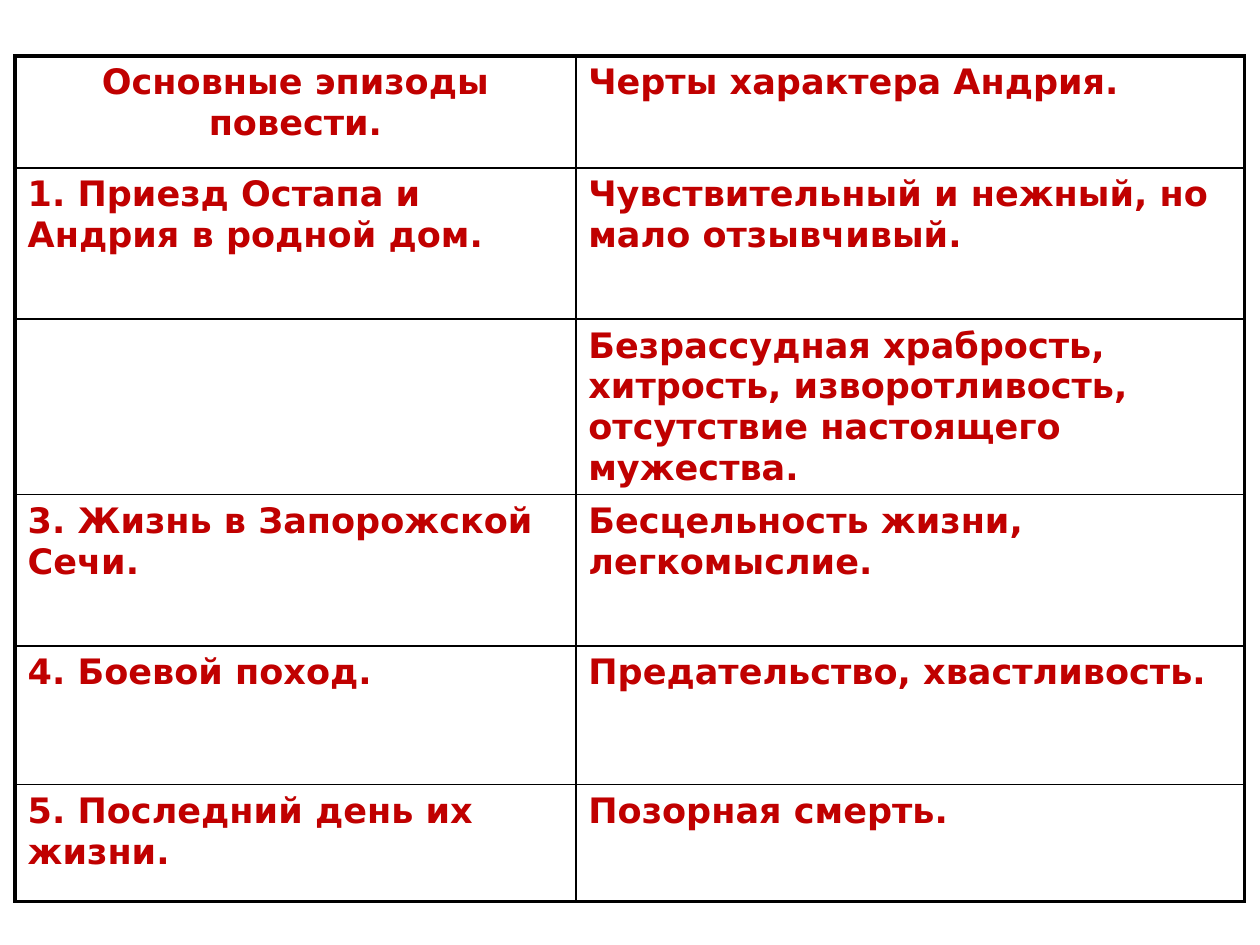
import pptx
import pptx.util
import pptx.dml.color
import pptx.enum.text
import pptx.oxml
from pptx.oxml.ns import nsdecls

Pt = pptx.util.Pt
RGB = pptx.dml.color.RGBColor.from_string
Align = pptx.enum.text.PP_ALIGN

# Content
ROWS = [
    ("Основные эпизоды повести.", "Черты характера Андрия."),
    ("1. Приезд Остапа и Андрия в родной дом.",
     "Чувствительный и нежный, но мало отзывчивый."),
    ("", "Безрассудная храбрость, хитрость, изворотливость, "
         "отсутствие настоящего мужества."),
    ("3. Жизнь в Запорожской Сечи.", "Бесцельность жизни, легкомыслие."),
    ("4. Боевой поход.", "Предательство, хвастливость."),
    ("5. Последний день их жизни.", "Позорная смерть."),
]

# Format
COLORS = {"text": "C00000", "line": "000000"}
FONT = {"name": "DejaVu Sans", "size": Pt(20), "bold": True}
LEFT, TOP = 8.64, 32
WIDTHS = [320.4, 382.3]
HEIGHTS = [64, 86.4, 100.3, 86.4, 79.2, 67]
THICK, THIN = 2.25, 1


def border(cell, side, width):
    cell._tc.get_or_add_tcPr().append(pptx.oxml.parse_xml(
        f'<a:ln{side} {nsdecls("a")} w="{Pt(width)}"><a:solidFill>'
        f'<a:srgbClr val="{COLORS["line"]}"/></a:solidFill></a:ln{side}>'))


def fill(cell, text, outer):
    # Thick lines on the outer edge, thin ones inside
    for side in "LRTB":
        border(cell, side, THICK if outer[side] else THIN)
    cell.fill.background()
    para = cell.text_frame.paragraphs[0]
    font = para.font
    if text:
        run = para.add_run()
        run.text = text
        font = run.font
    for key, value in FONT.items():
        setattr(font, key, value)
    font.color.rgb = RGB(COLORS["text"])


def main():
    deck = pptx.Presentation()
    deck.slide_width, deck.slide_height = Pt(720), Pt(540)
    slide = deck.slides.add_slide(deck.slide_layouts[6])

    # Table grid
    table = slide.shapes.add_table(
        len(ROWS), len(WIDTHS), Pt(LEFT), Pt(TOP),
        Pt(sum(WIDTHS)), Pt(sum(HEIGHTS))).table
    table.first_row = table.horz_banding = False
    for col, width in zip(table.columns, WIDTHS):
        col.width = Pt(width)
    for row, height in zip(table.rows, HEIGHTS):
        row.height = Pt(height)

    # Cells
    for r, texts in enumerate(ROWS):
        for c, text in enumerate(texts):
            outer = {"L": c == 0, "R": c == len(WIDTHS) - 1,
                     "T": r == 0, "B": r == len(ROWS) - 1}
            fill(table.cell(r, c), text, outer)
    table.cell(0, 0).text_frame.paragraphs[0].alignment = Align.CENTER

    deck.save("out.pptx")


if __name__ == "__main__":
    main()
